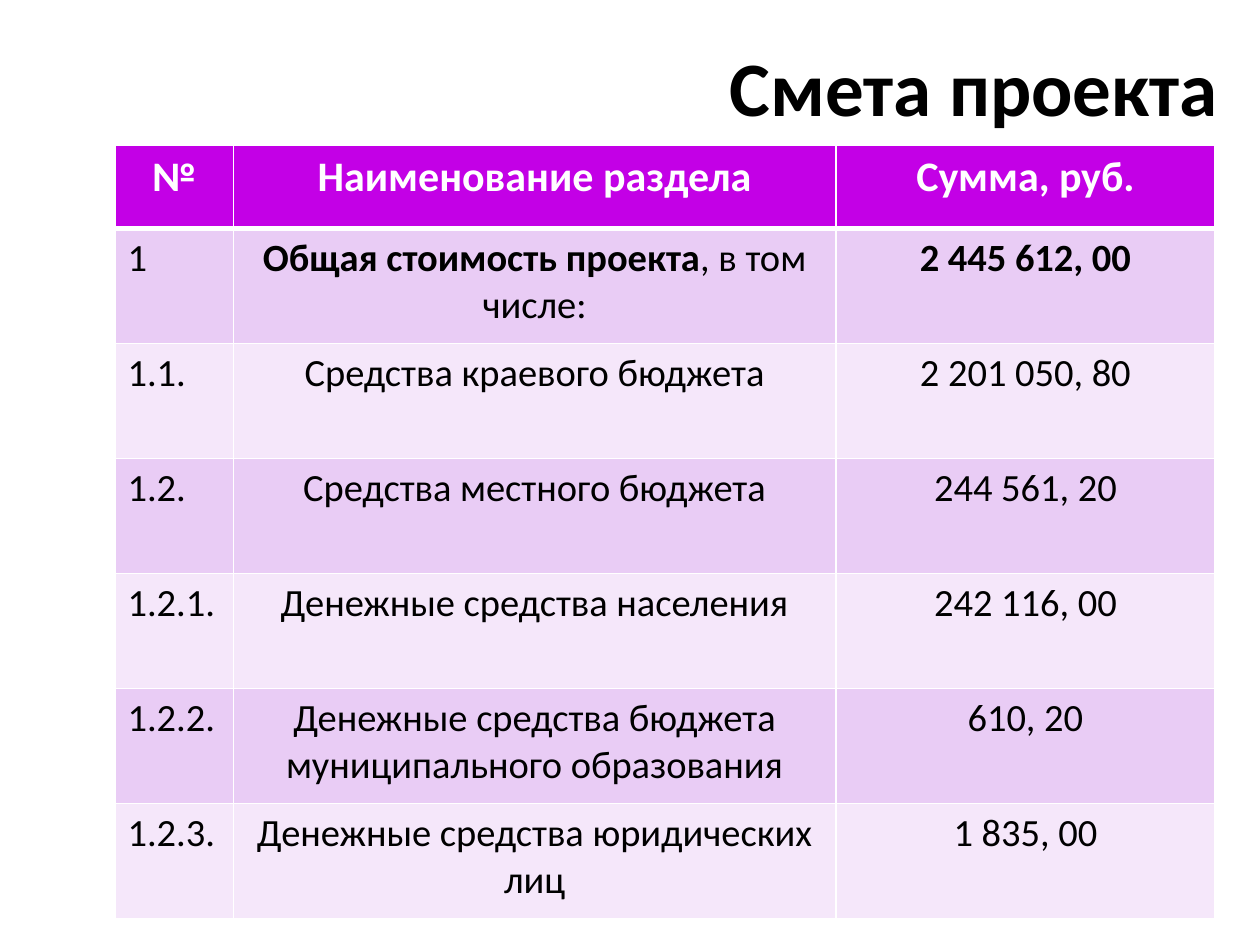
from lxml import etree
from pptx import Presentation
from pptx import util as u
from pptx.dml.color import RGBColor
from pptx.enum import text
from pptx.oxml.ns import qn

FONT = "Calibri"
WHITE, BLACK = "FFFFFF", "000000"
HEADER_FILL = "C300E6"
BAND_FILLS = ["E9CCF5", "F5E7FA"]
COLUMN_WIDTHS = [67.7, 344.2, 216.8]
HEADER_HEIGHT, ROW_HEIGHT = 47.5, 65.7
HEADERS = ["№", "Наименование раздела", "Сумма, руб."]
ESTIMATE = [
    ("1", ("Общая стоимость проекта", ", в том числе:"), ("2 445 612, 00", "")),
    ("1.1.", "Средства краевого бюджета", "2 201 050, 80"),
    ("1.2.", "Средства местного бюджета", "244 561, 20"),
    ("1.2.1.", "Денежные средства населения", "242 116, 00"),
    ("1.2.2.", "Денежные средства бюджета муниципального образования", "610, 20"),
    ("1.2.3.", "Денежные средства юридических лиц", "1 835, 00"),
]


def color(value):
    return RGBColor.from_string(value)


def style_paragraph(para, size, ink, align, bold=None):
    para.alignment = align
    para.font.name = FONT
    para.font.size = u.Pt(size)
    para.font.color.rgb = color(ink)
    para.font.bold = bold


def add_title(page, words):
    box = page.shapes.add_textbox(u.Pt(127.4), u.Pt(20.9), u.Pt(576), u.Pt(56.2))
    frame = box.text_frame
    frame.word_wrap = True
    frame.vertical_anchor = text.MSO_ANCHOR.MIDDLE
    para = frame.paragraphs[0]
    para.add_run().text = words
    style_paragraph(para, 44, BLACK, text.PP_ALIGN.RIGHT, True)


def set_borders(cell, top, bottom):
    properties = cell._tc.get_or_add_tcPr()
    widths = {"a:lnL": 1, "a:lnR": 1, "a:lnT": top, "a:lnB": bottom}
    for index, (tag, width) in enumerate(widths.items()):
        line = etree.Element(qn(tag), w=str(u.Pt(width)))
        fill = etree.SubElement(line, qn("a:solidFill"))
        etree.SubElement(fill, qn("a:srgbClr"), val=WHITE)
        properties.insert(index, line)


def fill_cell(cell, content, fill, size, ink, align, bold, top, bottom):
    cell.fill.solid()
    cell.fill.fore_color.rgb = color(fill)
    set_borders(cell, top, bottom)
    para = cell.text_frame.paragraphs[0]
    if isinstance(content, tuple):
        for words, strong in zip(content, (True, False)):
            if words:
                span = para.add_run()
                span.text = words
                span.font.bold = strong
    else:
        para.add_run().text = content
    style_paragraph(para, size, ink, align, bold)


def add_estimate(page):
    rows = [HEADERS, *ESTIMATE]
    heights = [HEADER_HEIGHT] + [ROW_HEIGHT] * len(ESTIMATE)
    frame = page.shapes.add_table(
        len(rows), len(HEADERS), u.Pt(65.7), u.Pt(83.2),
        u.Pt(sum(COLUMN_WIDTHS)), u.Pt(sum(heights)))
    table = frame.table
    for column, width in zip(table.columns, COLUMN_WIDTHS):
        column.width = u.Pt(width)
    for i, (contents, height) in enumerate(zip(rows, heights)):
        table.rows[i].height = u.Pt(height)
        header = i == 0
        fill = HEADER_FILL if header else BAND_FILLS[(i - 1) % 2]
        size, ink = (24, WHITE) if header else (22, BLACK)
        for j, content in enumerate(contents):
            centred = header or j > 0
            align = text.PP_ALIGN.CENTER if centred else text.PP_ALIGN.LEFT
            fill_cell(table.cell(i, j), content, fill, size, ink, align, header,
                      top=3 if i == 1 else 1, bottom=3 if header else 1)


def main():
    deck = Presentation()
    deck.slide_width, deck.slide_height = u.Pt(720), u.Pt(540)
    page = deck.slides.add_slide(deck.slide_layouts[6])
    add_title(page, "Смета проекта")
    add_estimate(page)
    deck.save("out.pptx")


if __name__ == "__main__":
    main()
